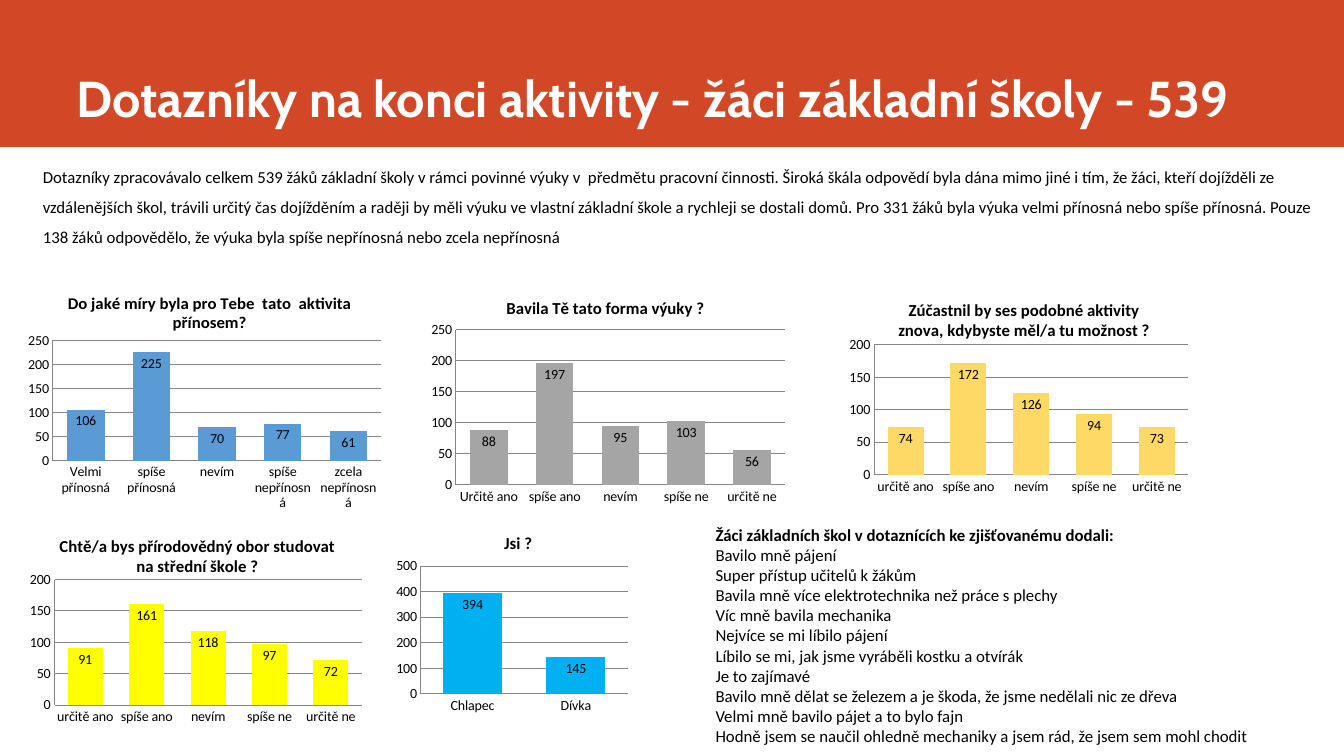
from lxml import etree
from pptx import Presentation
from pptx.chart.data import CategoryChartData
from pptx.dml.color import RGBColor
from pptx.enum.chart import XL_CHART_TYPE as ChartType, XL_LABEL_POSITION as LabelPosition, XL_TICK_MARK as TickMark
from pptx.enum.shapes import MSO_SHAPE as ShapeType
from pptx.enum.text import MSO_ANCHOR as Anchor
from pptx.oxml.ns import qn
from pptx.util import Pt

COLORS = {
    "band": "D24726", "white": "FFFFFF", "black": "000000", "grid": "868686",
    "blue": "5B9BD5", "grey": "A5A5A5", "sand": "FFD966", "yellow": "FFFF00", "cyan": "00B0F0",
}
FORMATS = {
    "title": {"name": "Cabin", "size": Pt(36), "bold": True},
    "heading": {"name": "Calibri", "size": Pt(12), "bold": True},
    "body": {"name": "Calibri", "size": Pt(12), "bold": False},
    "chart": {"name": "Calibri", "size": Pt(10), "bold": False},
}
SLIDE_SIZE = (960, 540)
TITLE = "Dotazníky na konci aktivity - žáci základní školy - 539"
INTRO = (
    "Dotazníky zpracovávalo celkem 539 žáků základní školy v rámci povinné výuky v  předmětu "
    "pracovní činnosti. Široká škála odpovědí byla dána mimo jiné i tím, že žáci, kteří dojížděli "
    "ze vzdálenějších škol, trávili určitý čas dojížděním a raději by měli výuku ve vlastní základní "
    "škole a rychleji se dostali domů. Pro 331 žáků byla výuka velmi přínosná nebo spíše přínosná. "
    "Pouze 138 žáků odpovědělo, že výuka byla spíše nepřínosná nebo zcela nepřínosná"
)
COMMENTS_HEADING = "Žáci základních škol v dotaznících ke zjišťovanému dodali:"
COMMENTS = [
    "Bavilo mně pájení",
    "Super přístup učitelů k žákům",
    "Bavila mně více elektrotechnika než práce s plechy",
    "Víc mně bavila mechanika",
    "Nejvíce se mi líbilo pájení",
    "Líbilo se mi, jak jsme vyráběli kostku a otvírák",
    "Je to zajímavé",
    "Bavilo mně dělat se železem a je škoda, že jsme nedělali nic ze dřeva",
    "Velmi mně bavilo pájet a to bylo fajn",
    "Hodně jsem se naučil ohledně mechaniky a jsem rád, že jsem sem mohl chodit",
]
AGREEMENT = ["určitě ano", "spíše ano", "nevím", "spíše ne", "určitě ne"]
QUESTIONS = [
    {"box": (16.5, 199.5, 266.5, 165.5), "plot": (0.08, 0.27, 0.88, 0.53), "color": "blue",
     "title": "Do jaké míry byla pro Tebe  tato  aktivita\npřínosem?",
     "answers": ["Velmi přínosná", "spíše přínosná", "nevím", "spíše nepřínosná", "zcela nepřínosná"],
     "counts": [106, 225, 70, 77, 61], "top": 250, "step": 50, "overlap": 0},
    {"box": (299, 202.5, 267, 165.5), "plot": (0.1, 0.2, 0.88, 0.67), "color": "grey",
     "title": "Bavila Tě tato forma výuky ?",
     "answers": ["Určitě ano"] + AGREEMENT[1:],
     "counts": [88, 197, 95, 103, 56], "top": 250, "step": 50, "overlap": 40},
    {"box": (604, 204, 255, 157), "plot": (0.08, 0.27, 0.88, 0.59), "color": "sand",
     "title": "Zúčastnil by ses podobné aktivity\nznova, kdybyste měl/a tu možnost ?",
     "answers": AGREEMENT,
     "counts": [74, 172, 126, 94, 73], "top": 200, "step": 50, "overlap": 40},
    {"box": (13.5, 373, 255, 152), "plot": (0.1, 0.27, 0.86, 0.59), "color": "yellow",
     "title": "Chtě/a bys přírodovědný obor studovat\nna střední škole ?",
     "answers": AGREEMENT,
     "counts": [91, 161, 118, 97, 72], "top": 200, "step": 50, "overlap": 40},
    {"box": (283, 371, 174, 152), "plot": (0.1, 0.22, 0.85, 0.6), "color": "cyan",
     "title": "Jsi ?", "answers": ["Chlapec", "Dívka"],
     "counts": [394, 145], "top": 500, "step": 100, "overlap": 40},
]


def rgb(name):
    return RGBColor.from_string(COLORS[name])


def points(box):
    return [Pt(length) for length in box]


def set_all(target, values):
    for attribute, value in values.items():
        setattr(target, attribute, value)


def format_font(font, style, color="black"):
    set_all(font, FORMATS[style])
    font.color.rgb = rgb(color)


def add_text(slide, box, lines, color="black", anchor=Anchor.TOP, line_spacing=None):
    frame = slide.shapes.add_textbox(*points(box)).text_frame
    set_all(frame, {"word_wrap": True, "vertical_anchor": anchor})
    for index, (text, style) in enumerate(lines):
        paragraph = frame.add_paragraph() if index else frame.paragraphs[0]
        paragraph.line_spacing = line_spacing
        run = paragraph.add_run()
        run.text = text
        format_font(run.font, style, color)


def add_header(slide, box):
    left, top, width, height = box
    band = slide.shapes.add_shape(ShapeType.RECTANGLE, *points(box))
    band.shadow.inherit = False
    band.fill.solid()
    band.fill.fore_color.rgb = rgb("band")
    band.line.fill.background()
    title_box = (left + 47.5, top, width - 113, height - 10)
    add_text(slide, title_box, [(TITLE, "title")], "white", Anchor.BOTTOM)


def place_plot(chart, plot):
    area = chart.element.find(".//" + qn("c:plotArea"))
    for layout in area.findall(qn("c:layout")):
        area.remove(layout)
    layout = etree.Element(qn("c:layout"))
    manual = etree.SubElement(layout, qn("c:manualLayout"))
    settings = [("layoutTarget", "inner"), ("xMode", "edge"), ("yMode", "edge"), *zip("xywh", plot)]
    for tag, value in settings:
        etree.SubElement(manual, qn("c:" + tag)).set("val", str(value))
    area.insert(0, layout)


def keep_labels_level(chart):
    body = chart.element.find(".//" + qn("c:catAx") + "/" + qn("c:txPr") + "/" + qn("a:bodyPr"))
    body.set("rot", "0")
    body.set("vert", "horz")


def add_question(slide, box, question):
    data = CategoryChartData()
    data.categories = question["answers"]
    data.add_series("Series 1", question["counts"])
    chart = slide.shapes.add_chart(ChartType.COLUMN_CLUSTERED, *points(box), data).chart
    chart.has_legend = False
    format_font(chart.font, "chart")

    chart.has_title = True
    chart.chart_title.include_in_layout = False
    title = chart.chart_title.text_frame
    title.text = question["title"]
    for paragraph in title.paragraphs:
        format_font(paragraph.font, "heading")
        for run in paragraph.runs:
            format_font(run.font, "heading")

    values = chart.value_axis
    set_all(values, {"minimum_scale": 0, "maximum_scale": question["top"],
                     "major_unit": question["step"], "has_major_gridlines": True})
    for axis in (chart.category_axis, values):
        set_all(axis, {"major_tick_mark": TickMark.NONE, "minor_tick_mark": TickMark.NONE})
        format_font(axis.tick_labels.font, "chart")
    keep_labels_level(chart)
    for line in (chart.category_axis.format.line, values.format.line, values.major_gridlines.format.line):
        line.width = Pt(0.75)
        line.color.rgb = rgb("grid")

    plot = chart.plots[0]
    set_all(plot, {"gap_width": 75, "overlap": question["overlap"],
                   "vary_by_categories": False, "has_data_labels": True})
    set_all(plot.data_labels, {"show_value": True, "position": LabelPosition.INSIDE_END})
    format_font(plot.data_labels.font, "chart")
    fill = plot.series[0].format.fill
    fill.solid()
    fill.fore_color.rgb = rgb(question["color"])
    place_plot(chart, question["plot"])


def add_comments(slide, box):
    lines = [(COMMENTS_HEADING, "heading")] + [(comment, "body") for comment in COMMENTS]
    add_text(slide, box, lines)


def main():
    presentation = Presentation()
    presentation.slide_width, presentation.slide_height = points(SLIDE_SIZE)
    slide = presentation.slides.add_slide(presentation.slide_layouts[6])
    add_header(slide, (0, 0, SLIDE_SIZE[0], 105))
    for question in QUESTIONS:
        add_question(slide, question["box"], question)
    add_text(slide, (23.5, 108, 924, 73), [(INTRO, "body")], line_spacing=1.5)
    add_comments(slide, (504, 371, 436, 167))
    presentation.save("out.pptx")


if __name__ == "__main__":
    main()
